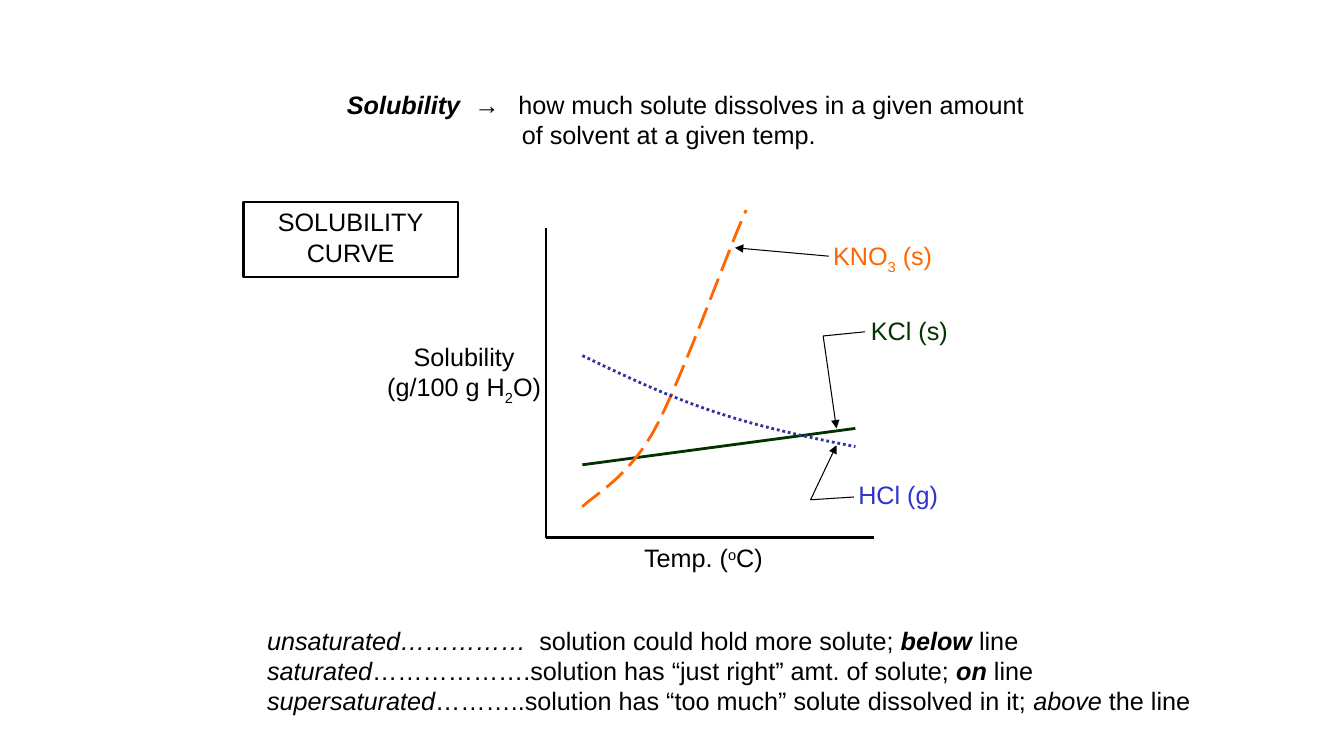
from dataclasses import dataclass
from itertools import pairwise

from lxml.etree import SubElement
from pptx import Presentation
from pptx.dml.color import RGBColor
from pptx.enum.dml import MSO_LINE
from pptx.enum.shapes import MSO_CONNECTOR, MSO_SHAPE
from pptx.enum.text import MSO_ANCHOR, MSO_AUTO_SIZE, PP_ALIGN
from pptx.oxml.ns import qn
from pptx.util import Pt

Point = tuple[float, float]
Frame = tuple[float, float, float, float]


@dataclass(frozen=True)
class Theme:
    font: str = "Arial"
    size: float = 18
    black: str = "000000"
    white: str = "FFFFFF"
    nitrate: str = "FF6600"
    chloride: str = "003300"
    gas_curve: str = "333399"
    gas_label: str = "3333CC"
    axis_width: float = 1.75
    curve_width: float = 2
    leader_width: float = 0.75
    frame_width: float = 1.5


THEME = Theme()


@dataclass(frozen=True)
class Span:
    text: str
    bold: bool = False
    italic: bool = False
    baseline: int = 0


@dataclass(frozen=True)
class Para:
    spans: list[Span]
    indent: float = 0


@dataclass(frozen=True)
class Label:
    frame: Frame
    paras: list[Para]
    color: str = THEME.black
    align: PP_ALIGN = PP_ALIGN.LEFT


@dataclass(frozen=True)
class Curve:
    points: list[Point]
    color: str
    dash: MSO_LINE


@dataclass(frozen=True)
class Stroke:
    points: list[Point]
    color: str
    width: float
    arrow: bool = False


DEFINITION = Label((219, 60, 541, 72), [
    Para([Span("Solubility  ", True, True),
          Span("→\thow much solute dissolves in a given amount")], 21.6),
    Para([Span("of solvent at a given temp.")], 146.5),
])
STATES = Label((162, 443, 721, 94), [
    Para([Span("unsaturated……………\t", italic=True),
          Span("solution could hold more solute; "),
          Span("below", True, True), Span(" line")], 21.6),
    Para([Span("saturated", italic=True),
          Span("……………….solution has “just right” amt. of solute; "),
          Span("on", True, True), Span(" line")], 21.6),
    Para([Span("supersaturated", italic=True),
          Span("………..solution has “too much” solute dissolved in it; "),
          Span("above ", italic=True), Span("the line")], 21.6),
])
HEADING = Label((174, 144, 153, 54),
                [Para([Span("SOLUBILITY")]), Para([Span("CURVE")])], align=PP_ALIGN.CENTER)
LABELS = [
    Label((453, 384, 117, 36), [Para([Span("Temp. ("), Span("o", baseline=30), Span("C)")])]),
    Label((264, 240, 135, 72), [
        Para([Span("Solubility")]),
        Para([Span("(g/100 g H"), Span("2", baseline=-30), Span("O)")]),
    ], align=PP_ALIGN.CENTER),
    Label((588, 168, 117, 36),
          [Para([Span("KNO"), Span("3", baseline=-30), Span(" (s)")])], THEME.nitrate),
    Label((615, 222, 117, 36), [Para([Span("KCl (s)")])], THEME.chloride),
    Label((606, 339, 117, 36), [Para([Span("HCl (g)")])], THEME.gas_label),
]
CURVES = [
    Curve([(416, 362), (425, 353), (449, 341), (468, 306),
           (487, 271), (522, 173.5), (533, 150)], THEME.nitrate, MSO_LINE.LONG_DASH),
    Curve([(416, 254), (445, 268), (474.5, 282), (507, 293),
           (539, 304), (575, 312), (611, 319)], THEME.gas_curve, MSO_LINE.ROUND_DOT),
]
STROKES = [
    Stroke([(390, 163), (390, 384), (624, 384)], THEME.black, THEME.axis_width),
    Stroke([(416, 332), (611, 306)], THEME.chloride, THEME.curve_width),
    Stroke([(610, 355), (579, 357), (597.5, 318)], THEME.black, THEME.leader_width, True),
    Stroke([(618, 237), (588, 240), (597.5, 306)], THEME.black, THEME.leader_width, True),
    Stroke([(592, 183), (525, 177)], THEME.black, THEME.leader_width, True),
]


def rgb(color: str) -> RGBColor:
    return RGBColor.from_string(color)


def set_line(shape, color: str, width: float) -> None:
    shape.line.color.rgb = rgb(color)
    shape.line.width = Pt(width)


def write_label(box, label: Label) -> None:
    box.left, box.top, box.width, box.height = map(Pt, label.frame)
    text_frame = box.text_frame
    text_frame.word_wrap = True
    text_frame.auto_size = MSO_AUTO_SIZE.NONE
    text_frame.vertical_anchor = MSO_ANCHOR.TOP
    text_frame.text = "\n".join("" for _ in label.paras)
    for paragraph, para in zip(text_frame.paragraphs, label.paras):
        paragraph.alignment = label.align
        paragraph.space_before = Pt(0)
        properties = paragraph._p.get_or_add_pPr()
        properties.set("marL", "0")
        properties.set("indent", str(Pt(para.indent)))
        SubElement(properties, qn("a:buNone"))
        for span in para.spans:
            run = paragraph.add_run()
            run.text = span.text
            font = run.font
            font.name, font.size = THEME.font, Pt(THEME.size)
            font.bold, font.italic = span.bold, span.italic
            font.color.rgb = rgb(label.color)
            if span.baseline:
                run._r.get_or_add_rPr().set("baseline", str(span.baseline * 1000))


def bezier(points: list[Point], t: float) -> Point:
    while len(points) > 1:
        points = [(a[0] + (b[0] - a[0]) * t, a[1] + (b[1] - a[1]) * t)
                  for a, b in pairwise(points)]
    return points[0]


def draw_curve(page, curve: Curve, steps: int = 24) -> None:
    outline = [bezier(curve.points[start:start + 4], step / steps)
               for start in range(0, len(curve.points) - 1, 3)
               for step in range(steps + 1)]
    vertices = [(Pt(x), Pt(y)) for x, y in outline]
    builder = page.shapes.build_freeform(*vertices[0])
    builder.add_line_segments(vertices[1:], close=False)
    shape = builder.convert_to_shape()
    shape.shadow.inherit = False
    shape.fill.background()
    set_line(shape, curve.color, THEME.curve_width)
    shape.line.dash_style = curve.dash


def draw_stroke(page, stroke: Stroke) -> None:
    for start, end in pairwise(stroke.points):
        connector = page.shapes.add_connector(
            MSO_CONNECTOR.STRAIGHT, *map(Pt, start + end))
        set_line(connector, stroke.color, stroke.width)
        if stroke.arrow and end == stroke.points[-1]:
            SubElement(connector.line._get_or_add_ln(), qn("a:tailEnd"), type="triangle")
        SubElement(connector._element.spPr, qn("a:effectLst"))


def main() -> None:
    deck = Presentation()
    deck.slide_width, deck.slide_height = Pt(960), Pt(540)
    page = deck.slides.add_slide(deck.slide_layouts[1])
    write_label(page.shapes.title, DEFINITION)
    write_label(page.placeholders[1], STATES)
    for stroke in STROKES:
        draw_stroke(page, stroke)
    for curve in CURVES:
        draw_curve(page, curve)
    for label in LABELS:
        write_label(page.shapes.add_textbox(*map(Pt, label.frame)), label)
    heading = page.shapes.add_shape(MSO_SHAPE.RECTANGLE, *map(Pt, HEADING.frame))
    heading.shadow.inherit = False
    heading.fill.solid()
    heading.fill.fore_color.rgb = rgb(THEME.white)
    set_line(heading, THEME.black, THEME.frame_width)
    write_label(heading, HEADING)
    deck.save("out.pptx")


if __name__ == "__main__":
    main()
